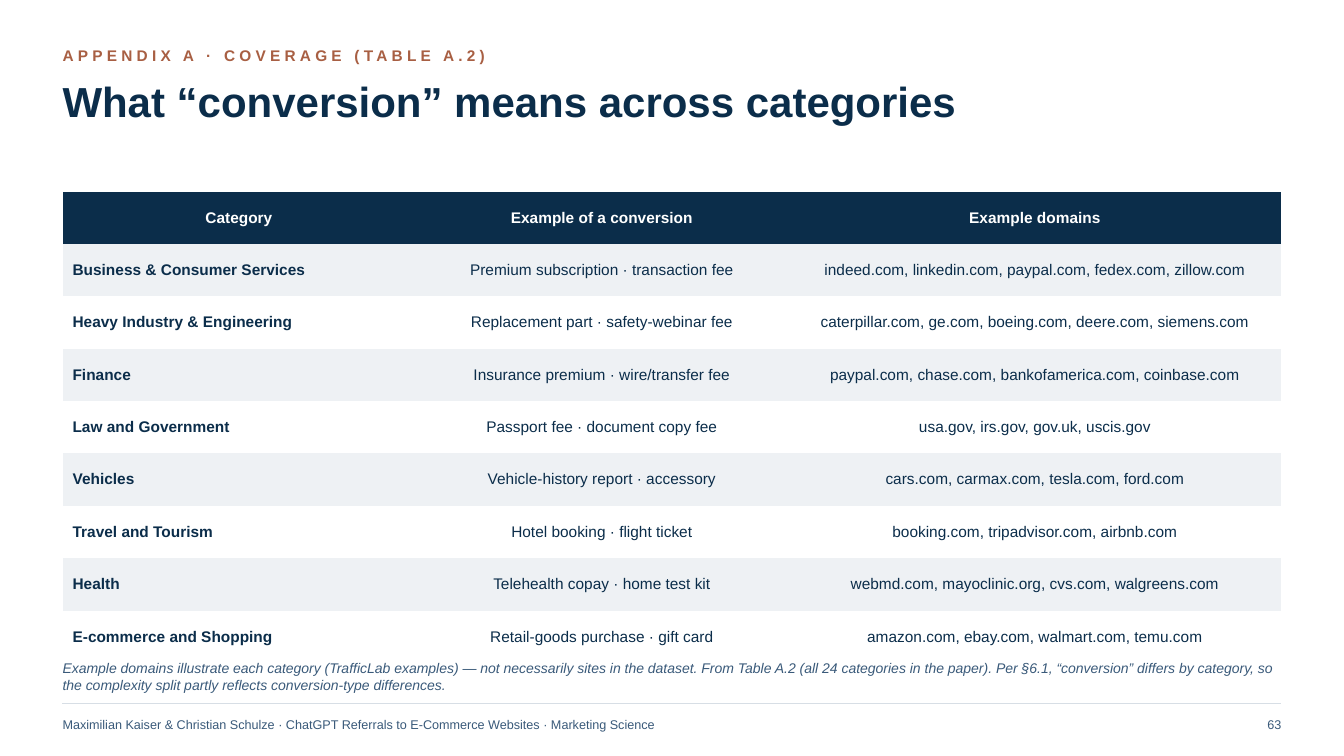
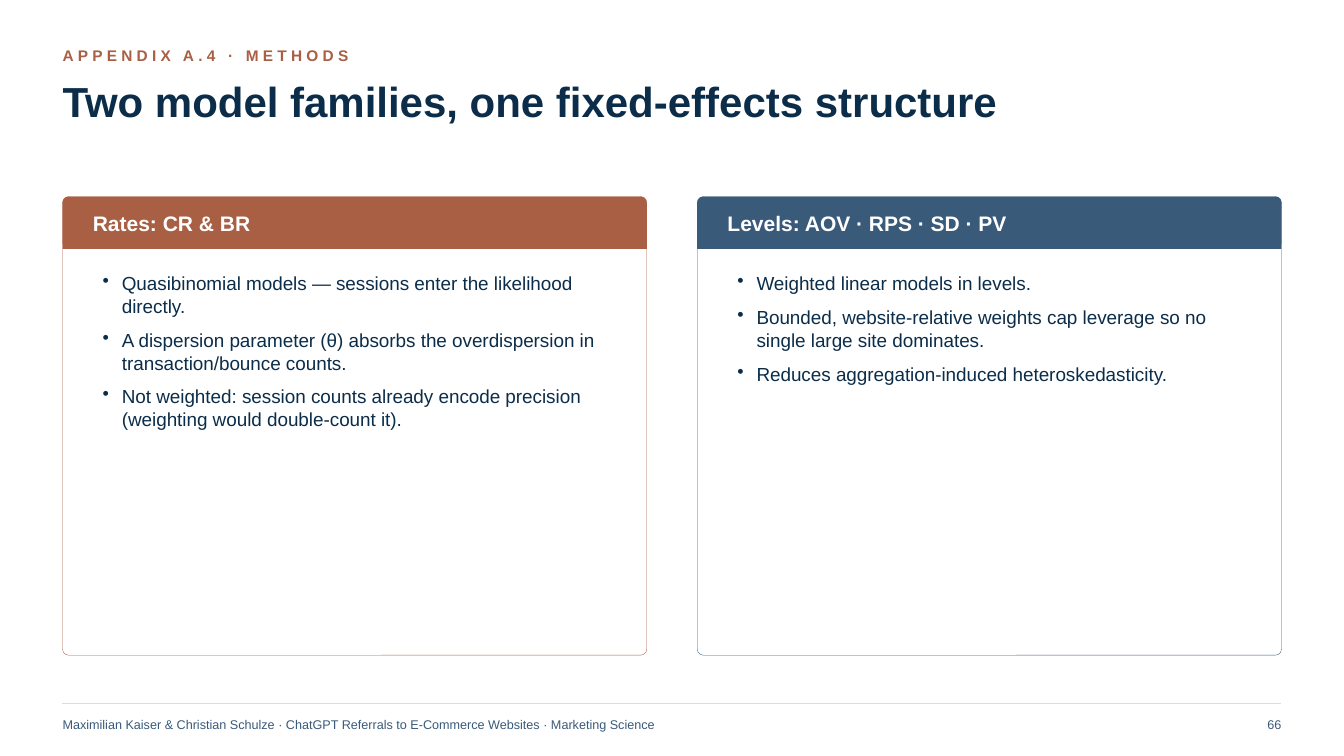
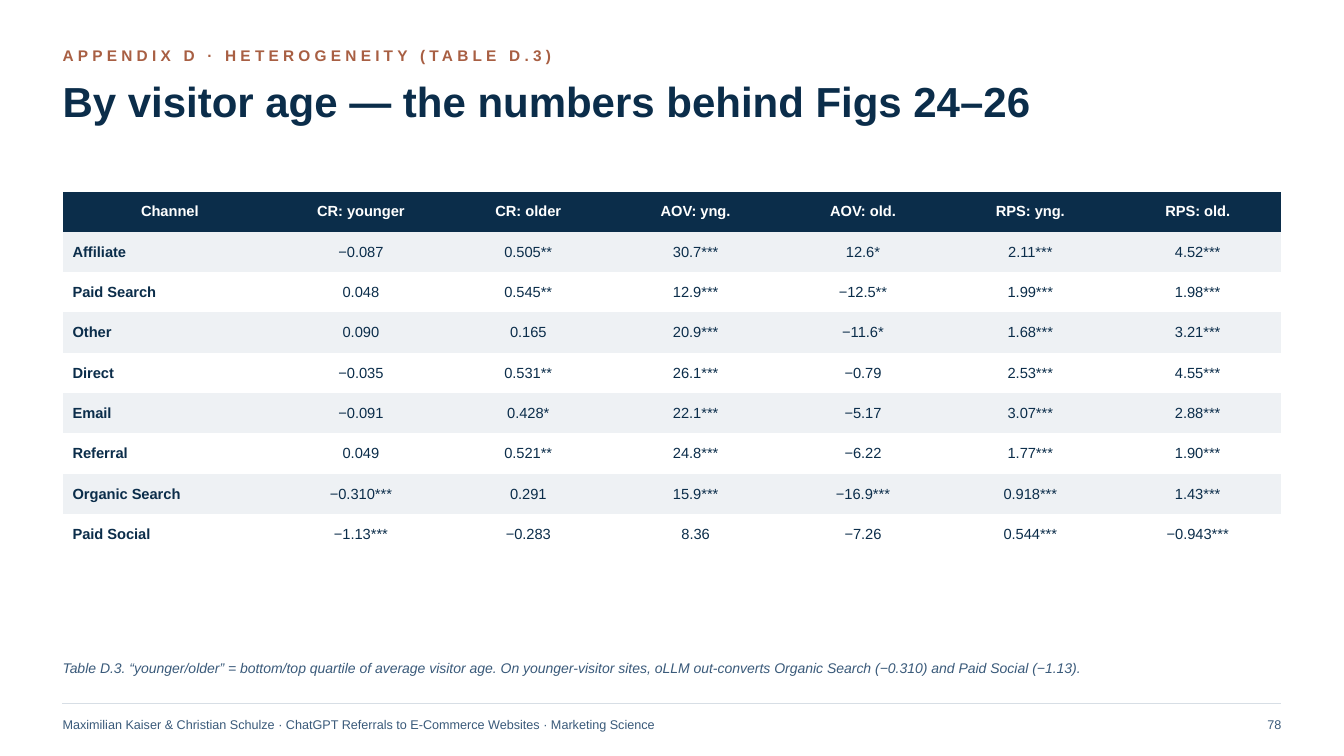
from lxml.etree import SubElement
from pptx import Presentation
from pptx.dml.color import RGBColor
from pptx.enum.shapes import MSO_CONNECTOR, MSO_SHAPE
from pptx.enum.text import MSO_ANCHOR, PP_ALIGN
from pptx.oxml.ns import qn
from pptx.util import Inches, Pt

NAVY = RGBColor(0x0B, 0x2D, 0x4A)
SLATE = RGBColor(0x3A, 0x5A, 0x7A)
RUST = RGBColor(0xA8, 0x5F, 0x43)
MIST = RGBColor(0xEE, 0xF1, 0xF4)
RULE = RGBColor(0xD7, 0xDE, 0xE5)
WHITE = RGBColor(0xFF, 0xFF, 0xFF)

FONT = "Arial"
LEFT = 0.62
WIDTH = 12.09
CARD_GAP = 0.5
CARD_PAD = 0.3
CARD_HEADER = 0.52
CORNER = 0.06
BULLET_INDENT = Inches(0.19)
PLAIN_TABLE_STYLE = "{2D5ABB26-0587-4C30-8999-92F81FD0307C}"
CITATION = ("Maximilian Kaiser & Christian Schulze · ChatGPT Referrals to "
            "E-Commerce Websites · Marketing Science")

CONVERSION_ROWS = [
    ("Category", "Example of a conversion", "Example domains"),
    ("Business & Consumer Services", "Premium subscription · transaction fee",
     "indeed.com, linkedin.com, paypal.com, fedex.com, zillow.com"),
    ("Heavy Industry & Engineering", "Replacement part · safety-webinar fee",
     "caterpillar.com, ge.com, boeing.com, deere.com, siemens.com"),
    ("Finance", "Insurance premium · wire/transfer fee",
     "paypal.com, chase.com, bankofamerica.com, coinbase.com"),
    ("Law and Government", "Passport fee · document copy fee",
     "usa.gov, irs.gov, gov.uk, uscis.gov"),
    ("Vehicles", "Vehicle-history report · accessory",
     "cars.com, carmax.com, tesla.com, ford.com"),
    ("Travel and Tourism", "Hotel booking · flight ticket",
     "booking.com, tripadvisor.com, airbnb.com"),
    ("Health", "Telehealth copay · home test kit",
     "webmd.com, mayoclinic.org, cvs.com, walgreens.com"),
    ("E-commerce and Shopping", "Retail-goods purchase · gift card",
     "amazon.com, ebay.com, walmart.com, temu.com"),
]

AGE_ROWS = [
    ("Channel", "CR: younger", "CR: older", "AOV: yng.", "AOV: old.", "RPS: yng.", "RPS: old."),
    ("Affiliate", "−0.087", "0.505**", "30.7***", "12.6*", "2.11***", "4.52***"),
    ("Paid Search", "0.048", "0.545**", "12.9***", "−12.5**", "1.99***", "1.98***"),
    ("Other", "0.090", "0.165", "20.9***", "−11.6*", "1.68***", "3.21***"),
    ("Direct", "−0.035", "0.531**", "26.1***", "−0.79", "2.53***", "4.55***"),
    ("Email", "−0.091", "0.428*", "22.1***", "−5.17", "3.07***", "2.88***"),
    ("Referral", "0.049", "0.521**", "24.8***", "−6.22", "1.77***", "1.90***"),
    ("Organic Search", "−0.310***", "0.291", "15.9***", "−16.9***", "0.918***", "1.43***"),
    ("Paid Social", "−1.13***", "−0.283", "8.36", "−7.26", "0.544***", "−0.943***"),
]

MODEL_CARDS = [
    ("Rates: CR & BR", RUST, [
        "Quasibinomial models — sessions enter the likelihood directly.",
        "A dispersion parameter (θ) absorbs the overdispersion in transaction/bounce counts.",
        "Not weighted: session counts already encode precision (weighting would double-count it).",
    ]),
    ("Levels: AOV · RPS · SD · PV", SLATE, [
        "Weighted linear models in levels.",
        "Bounded, website-relative weights cap leverage so no single large site dominates.",
        "Reduces aggregation-induced heteroskedasticity.",
    ]),
]


def style_para(para, size, color, bold=False, italic=False, align=PP_ALIGN.LEFT):
    para.alignment = align
    font = para.font
    font.name, font.size = FONT, Pt(size)
    font.bold, font.italic = bold, italic
    font.color.rgb = color


def add_frame(page, left, top, width, height, anchor=MSO_ANCHOR.TOP, inset=None):
    box = page.shapes.add_textbox(Inches(left), Inches(top), Inches(width), Inches(height))
    frame = box.text_frame
    frame.word_wrap = True
    frame.vertical_anchor = anchor
    if inset is not None:
        frame.margin_left = frame.margin_right = Inches(inset)
        frame.margin_top = frame.margin_bottom = Inches(inset)
    return frame


def add_label(page, text, left, top, width, height, size, color,
              anchor=MSO_ANCHOR.MIDDLE, **style):
    para = add_frame(page, left, top, width, height, anchor, 0).paragraphs[0]
    para.text = text
    style_para(para, size, color, **style)
    return para


def add_panel(page, kind, left, top, width, height, fill, line=None):
    panel = page.shapes.add_shape(kind, Inches(left), Inches(top), Inches(width), Inches(height))
    panel.shadow.inherit = False
    panel.fill.solid()
    panel.fill.fore_color.rgb = fill
    if kind == MSO_SHAPE.ROUNDED_RECTANGLE:
        panel.adjustments[0] = CORNER / min(width, height)
    if line is None:
        panel.line.fill.background()
    else:
        panel.line.color.rgb = line
        panel.line.width = Pt(0.25)


def add_footer(page, number, top=6.98):
    rule = page.shapes.add_connector(MSO_CONNECTOR.STRAIGHT, Inches(LEFT), Inches(top),
                                     Inches(LEFT + WIDTH), Inches(top))
    rule.line.color.rgb = RULE
    rule.line.width = Pt(0.5)
    SubElement(rule.element.spPr, qn("a:effectLst"))
    add_label(page, CITATION, LEFT, top + 0.06, WIDTH - 1, 0.3, 9, SLATE)
    add_label(page, str(number), LEFT + WIDTH - 1, top + 0.06, 1, 0.3, 9, SLATE,
              align=PP_ALIGN.RIGHT)


def add_page(deck, kicker, title, number):
    page = deck.slides.add_slide(deck.slide_layouts[6])
    kicker_para = add_label(page, kicker, LEFT, 0.4, WIDTH, 0.3, 11, RUST, bold=True)
    kicker_para.runs[0].font._element.set("spc", "300")
    title_para = add_label(page, title, LEFT, 0.74, WIDTH, 0.95, 30, NAVY,
                           MSO_ANCHOR.TOP, bold=True)
    title_para.line_spacing = 1.02
    add_footer(page, number)
    return page


def add_data_table(page, rows, column_widths, row_height, size, left=LEFT, top=1.9):
    graphic = page.shapes.add_table(len(rows), len(column_widths), Inches(left), Inches(top),
                                    Inches(sum(column_widths)), Inches(row_height * len(rows)))
    graphic.element.find(".//" + qn("a:tableStyleId")).text = PLAIN_TABLE_STYLE
    table = graphic.table
    for column, width in zip(table.columns, column_widths):
        column.width = Inches(width)
    for row_index, values in enumerate(rows):
        table.rows[row_index].height = Inches(row_height)
        header = row_index == 0
        fill = NAVY if header else MIST if row_index % 2 else WHITE
        for column_index, value in enumerate(values):
            cell = table.cell(row_index, column_index)
            cell.fill.solid()
            cell.fill.fore_color.rgb = fill
            cell.vertical_anchor = MSO_ANCHOR.MIDDLE
            row_name = column_index == 0
            para = cell.text_frame.paragraphs[0]
            para.text = value
            style_para(para, size, WHITE if header else NAVY, bold=header or row_name,
                       align=PP_ALIGN.LEFT if row_name and not header else PP_ALIGN.CENTER)


def add_note(page, text):
    add_label(page, text, LEFT, 6.54, WIDTH, 0.4, 10, SLATE, MSO_ANCHOR.TOP, italic=True)


def add_bullets(frame, items):
    for index, item in enumerate(items):
        para = frame.paragraphs[0] if index == 0 else frame.add_paragraph()
        para.text = item
        properties = para._p.get_or_add_pPr()
        properties.set("marL", str(BULLET_INDENT))
        properties.set("indent", str(-BULLET_INDENT))
        SubElement(properties, qn("a:buChar")).set("char", "•")
        para.space_after = Pt(8)
        style_para(para, 13.5, NAVY)


def add_card(page, left, top, width, height, heading, color, items):
    rounded = MSO_SHAPE.ROUNDED_RECTANGLE
    add_panel(page, rounded, left, top, width, height, WHITE, color)
    add_panel(page, rounded, left, top, width, CARD_HEADER, color)
    add_panel(page, MSO_SHAPE.RECTANGLE, left, top + CORNER, width, CARD_HEADER - CORNER, color)
    inner_left, inner_width = left + CARD_PAD, width - 2 * CARD_PAD
    add_label(page, heading, inner_left, top, inner_width, CARD_HEADER, 15, WHITE, bold=True)
    add_bullets(add_frame(page, inner_left, top + 0.7, inner_width, height - 0.87), items)


def build_conversion_page(deck):
    page = add_page(deck, "APPENDIX A · COVERAGE (TABLE A.2)",
                    "What “conversion” means across categories", 63)
    add_data_table(page, CONVERSION_ROWS, [3.5, 3.7, 4.89], 0.52, 11)
    add_note(page, "Example domains illustrate each category (TrafficLab examples) — not "
                   "necessarily sites in the dataset. From Table A.2 (all 24 categories in the "
                   "paper). Per §6.1, “conversion” differs by category, so the complexity split "
                   "partly reflects conversion-type differences.")


def build_models_page(deck):
    page = add_page(deck, "APPENDIX A.4 · METHODS",
                    "Two model families, one fixed-effects structure", 66)
    width = (WIDTH - CARD_GAP) / 2
    for index, card in enumerate(MODEL_CARDS):
        add_card(page, LEFT + index * (width + CARD_GAP), 1.95, width, 4.55, *card)


def build_age_page(deck):
    page = add_page(deck, "APPENDIX D · HETEROGENEITY (TABLE D.3)",
                    "By visitor age — the numbers behind Figs 24–26", 78)
    add_data_table(page, AGE_ROWS, [2.13] + [1.66] * 6, 0.4, 10.5)
    add_note(page, "Table D.3. “younger/older” = bottom/top quartile of average visitor age. "
                   "On younger-visitor sites, oLLM out-converts Organic Search (−0.310) and "
                   "Paid Social (−1.13).")


def main():
    deck = Presentation()
    deck.slide_width, deck.slide_height = Inches(13.33), Inches(7.5)
    build_conversion_page(deck)
    build_models_page(deck)
    build_age_page(deck)
    deck.save("out.pptx")


if __name__ == "__main__":
    main()
